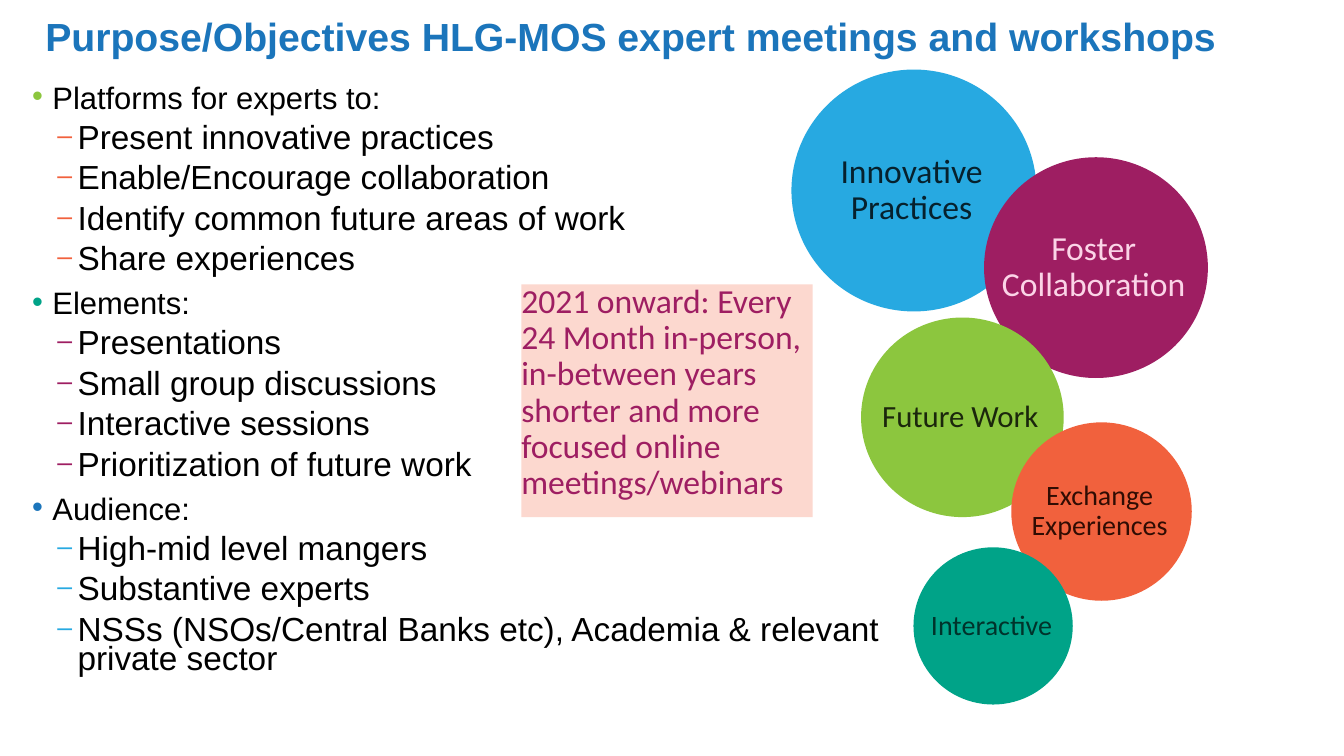
from pptx import Presentation
from pptx.dml.color import RGBColor
from pptx.enum import shapes, text
from pptx.oxml import ns
from pptx.util import Inches, Pt
from lxml import etree

BLUE = RGBColor(0x1B, 0x75, 0xBB)
SKY = RGBColor(0x27, 0xA9, 0xE1)
PLUM = RGBColor(0x9E, 0x1E, 0x62)
GREEN = RGBColor(0x8C, 0xC6, 0x3E)
ORANGE = RGBColor(0xF1, 0x61, 0x3D)
TEAL = RGBColor(0x00, 0xA3, 0x88)
PEACH = RGBColor(0xFC, 0xD8, 0xCF)
BLACK = RGBColor(0x00, 0x00, 0x00)
DARK_SKY = RGBColor(0x06, 0x21, 0x2D)
PALE_PINK = RGBColor(0xFB, 0xD4, 0xE7)
DARK_GREEN = RGBColor(0x1B, 0x27, 0x0C)
DARK_ORANGE = RGBColor(0x30, 0x0C, 0x03)
DARK_TEAL = RGBColor(0x00, 0x33, 0x2B)

# Outline: heading, heading bullet colour, item dash colour, items
OUTLINE = [
    ("Platforms for experts to:", GREEN, ORANGE, [
        "Present innovative practices",
        "Enable/Encourage collaboration",
        "Identify common future areas of work",
        "Share experiences"]),
    ("Elements:", TEAL, PLUM, [
        "Presentations",
        "Small group discussions",
        "Interactive sessions",
        "Prioritization of future work"]),
    ("Audience:", BLUE, SKY, [
        "High-mid level mangers",
        "Substantive experts",
        "NSSs (NSOs/Central Banks etc), Academia & relevant private sector"]),
]

# Circles: left, top, width, height, fill, text colour, text size, lines
CIRCLES = [
    (7.85, 0.69, 2.43, 2.4, SKY, DARK_SKY, 24, ["Innovative Practices"]),
    (9.76, 1.56, 2.22, 2.19, PLUM, PALE_PINK, 24, ["Foster Collaboration"]),
    (8.54, 3.15, 2.01, 1.98, GREEN, DARK_GREEN, 22, ["Future Work"]),
    (10.03, 4.19, 1.79, 1.77, ORANGE, DARK_ORANGE, 20,
     ["Exchange", "Experiences"]),
    (9.06, 5.43, 1.58, 1.56, TEAL, DARK_TEAL, 20, ["Interactive"]),
]


class SlideBuilder:
    """Holds the text style and the current slide."""

    HEADING = {"name": "Arial", "size": Pt(22.1)}
    ITEM = {"name": "Arial", "size": Pt(23.8)}

    def __init__(self, slide):
        self.slide = slide

    def set_frame(self, shape, anchor):
        frame = shape.text_frame
        values = {"margin_left": 0, "margin_top": 0, "margin_right": 0,
                  "margin_bottom": 0, "word_wrap": True,
                  "vertical_anchor": anchor}
        for name, value in values.items():
            setattr(frame, name, value)
        return frame

    def add_words(self, para, words, color, font, **layout):
        for name, value in layout.items():
            setattr(para, name, value)
        span = para.add_run()
        span.text = words
        for name, value in font.items():
            setattr(span.font, name, value)
        span.font.color.rgb = color

    def text_box(self, place, lines, color, font,
                 align=text.PP_ALIGN.LEFT):
        box = self.slide.shapes.add_textbox(*map(Inches, place))
        frame = self.set_frame(box, text.MSO_ANCHOR.MIDDLE)
        for index, words in enumerate(lines):
            para = frame.add_paragraph() if index else frame.paragraphs[0]
            self.add_words(para, words, color, font,
                           alignment=align, line_spacing=0.9)

    def filled_shape(self, kind, place, fill):
        shape = self.slide.shapes.add_shape(kind, *map(Inches, place))
        shape.shadow.inherit = False
        shape.fill.solid()
        shape.fill.fore_color.rgb = fill
        shape.line.fill.background()
        return shape

    def circle(self, left, top, width, height, fill, color, size, lines):
        self.filled_shape(shapes.MSO_SHAPE.OVAL,
                          (left, top, width, height), fill)
        label = (left, top + 0.195 * height, 0.98 * width, 0.61 * height)
        self.text_box(label, lines, color,
                      {"name": "Calibri", "size": Pt(size)},
                      text.PP_ALIGN.CENTER)

    def note(self, place, words, fill, color):
        shape = self.filled_shape(shapes.MSO_SHAPE.RECTANGLE, place, fill)
        frame = self.set_frame(shape, text.MSO_ANCHOR.TOP)
        self.add_words(frame.paragraphs[0], words, color,
                       {"name": "Calibri", "size": Pt(24)},
                       alignment=text.PP_ALIGN.LEFT, line_spacing=0.9)

    def bullet(self, para, mark, color, indent, percent):
        props = para._p.get_or_add_pPr()
        props.set("marL", str(Inches(indent)))
        props.set("indent", str(Inches(-0.2)))
        holder = etree.SubElement(props, ns.qn("a:buClr"))
        etree.SubElement(holder, ns.qn("a:srgbClr"), val=str(color))
        etree.SubElement(props, ns.qn("a:buSzPct"), val=str(percent * 1000))
        etree.SubElement(props, ns.qn("a:buFont"), typeface="Arial")
        etree.SubElement(props, ns.qn("a:buChar"), char=mark)

    def outline(self, place, sections):
        box = self.slide.shapes.add_textbox(*map(Inches, place))
        frame = self.set_frame(box, text.MSO_ANCHOR.TOP)
        para = frame.paragraphs[0]
        for index, (heading, dot, dash, items) in enumerate(sections):
            if index:
                para = frame.add_paragraph()
            self.bullet(para, "•", dot, 0.2, 100)
            self.add_words(para, heading, BLACK, self.HEADING,
                           line_spacing=0.73,
                           space_before=Pt(12 if index else 0))
            for item in items:
                para = frame.add_paragraph()
                self.bullet(para, "–", dash, 0.45, 80)
                self.add_words(para, item, BLACK, self.ITEM, level=1,
                               line_spacing=0.73, space_before=Pt(8))


def main():
    deck = Presentation()
    deck.slide_width, deck.slide_height = Inches(13.33), Inches(7.5)
    page = SlideBuilder(deck.slides.add_slide(deck.slide_layouts[6]))

    # Title and outline
    page.text_box((0.45, 0, 12.24, 0.77),
                  ["Purpose/Objectives HLG-MOS expert meetings and workshops"],
                  BLUE, {"name": "Arial", "size": Pt(28), "bold": True})
    page.outline((0.32, 0.87, 8.4, 6.21), OUTLINE)

    # Overlapping circles
    for circle in CIRCLES:
        page.circle(*circle)

    # Meeting schedule
    page.note((5.17, 2.82, 2.89, 2.31),
              "2021 onward: Every 24 Month in-person, in-between years "
              "shorter and more focused online meetings/webinars",
              PEACH, PLUM)

    deck.save("out.pptx")


if __name__ == "__main__":
    main()
